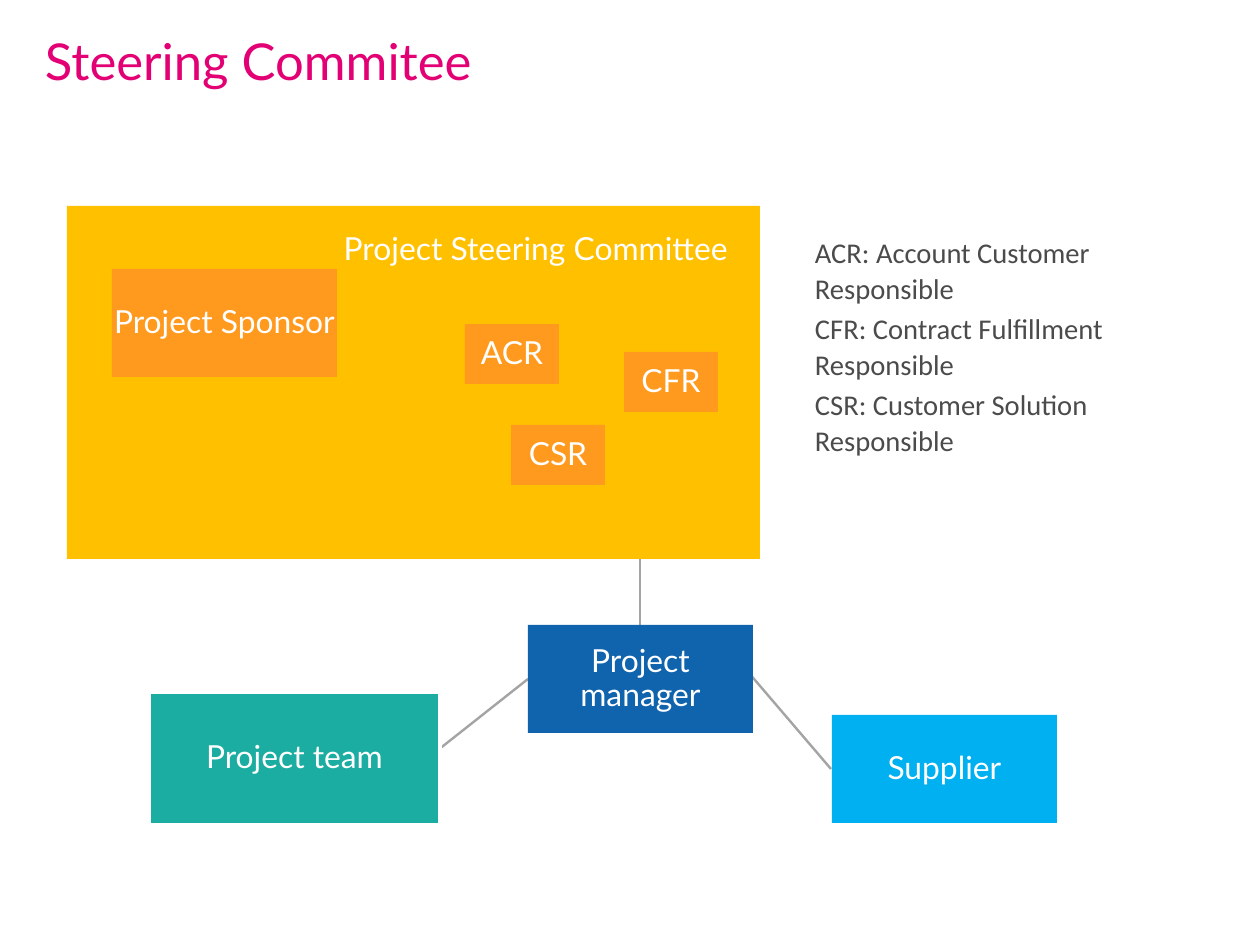
from lxml import etree
from pptx import Presentation
from pptx.dml.color import RGBColor
from pptx.enum.shapes import MSO_CONNECTOR, MSO_SHAPE
from pptx.enum.text import MSO_ANCHOR, PP_ALIGN
from pptx.oxml.ns import qn
from pptx.util import Pt

RECTANGLE = MSO_SHAPE.RECTANGLE
STRAIGHT = MSO_CONNECTOR.STRAIGHT
TOP, MIDDLE = MSO_ANCHOR.TOP, MSO_ANCHOR.MIDDLE
LEFT, CENTER, RIGHT = PP_ALIGN.LEFT, PP_ALIGN.CENTER, PP_ALIGN.RIGHT

PX = 8000  # EMU per px
SLIDE_SIZE = (1260, 945)
COLORS = {
    "title": "E20074", "committee": "FFC000", "role": "FF9A1E",
    "team": "1BADA2", "manager": "1063AD", "supplier": "00B0F0",
    "link": "A4A4A4", "white": "FFFFFF", "legend": "4B4B4B",
}

TITLE = "Steering Commitee"
TITLE_AREA = (45, 37, 1170, 73)
COMMITTEE = ("Project Steering Committee", "committee", (67, 206, 693, 353))
ROLE_SIZE = (94, 60)
PARTY_SIZE = (225, 108)
BOXES = [
    ("Project team", "team", (149, 692, 291, 133)),
    ("ACR", "role", (465, 324, *ROLE_SIZE)),
    ("CFR", "role", (624, 352, *ROLE_SIZE)),
    ("CSR", "role", (511, 425, *ROLE_SIZE)),
    ("Supplier", "supplier", (832, 715, *PARTY_SIZE)),
    ("Project manager", "manager", (528, 625, *PARTY_SIZE)),
    ("Project Sponsor", "role", (112, 269, *PARTY_SIZE)),
]
LINKS = [
    (640, 501, 640, 650),  # committee to manager
    (528, 679, 414, 769),  # manager to team
    (737, 659, 831, 769),  # manager to supplier
]
LEGEND = [
    "ACR: Account Customer Responsible",
    "CFR: Contract Fulfillment Responsible",
    "CSR: Customer Solution Responsible",
]
LEGEND_AREA = (806, 229, 421, 127)


def emu(lengths):
    return [length * PX for length in lengths]


def color(name):
    return RGBColor.from_string(COLORS[name])


def write(frame, lines, size, font, ink, align, anchor, insets, spacing):
    """Fill a text frame; insets are left, top, right, bottom in px."""
    frame.word_wrap = True
    frame.vertical_anchor = anchor
    (frame.margin_left, frame.margin_top,
     frame.margin_right, frame.margin_bottom) = emu(insets)
    frame.text = "\n".join(lines)
    for paragraph in frame.paragraphs:
        paragraph.alignment = align
        paragraph.line_spacing = spacing
        paragraph.font.size = Pt(size)
        paragraph.font.name = font
        paragraph.font.color.rgb = color(ink)


def add_box(slide, label, fill, area, align=CENTER, anchor=MIDDLE,
            insets=(1, 1, 1, 1)):
    box = slide.shapes.add_shape(RECTANGLE, *emu(area))
    box.shadow.inherit = False
    box.fill.solid()
    box.fill.fore_color.rgb = color(fill)
    if fill == "team":
        box.line.color.rgb = color("white")
        box.line.width = Pt(2)
    else:
        box.line.fill.background()
    write(box.text_frame, [label], 20, "Lato", "white", align, anchor,
          insets, 0.9)


def add_link(slide, ends):
    link = slide.shapes.add_connector(STRAIGHT, *emu(ends))
    link.line.color.rgb = color("link")
    link.line.width = Pt(1.5)
    etree.SubElement(link._element.spPr, qn("a:effectLst"))


def main():
    deck = Presentation()
    deck.slide_width, deck.slide_height = emu(SLIDE_SIZE)
    slide = deck.slides.add_slide(deck.slide_layouts[5])

    title = slide.shapes.title
    title.left, title.top, title.width, title.height = emu(TITLE_AREA)
    write(title.text_frame, [TITLE], 32, "Lato", "title", LEFT, TOP,
          (0, 0, 0, 0), 0.9)

    for ends in LINKS:
        add_link(slide, ends)
    add_box(slide, *COMMITTEE, RIGHT, TOP, (1, 27, 32, 1))
    for box in BOXES:
        add_box(slide, *box)

    legend = slide.shapes.add_textbox(*emu(LEGEND_AREA)).text_frame
    write(legend, LEGEND, 18, "Calibri", "legend", LEFT, TOP,
          (9, 5, 9, 5), 1.04)
    for entry in legend.paragraphs[1:]:
        entry.space_before = Pt(3)

    deck.save("out.pptx")


if __name__ == "__main__":
    main()
